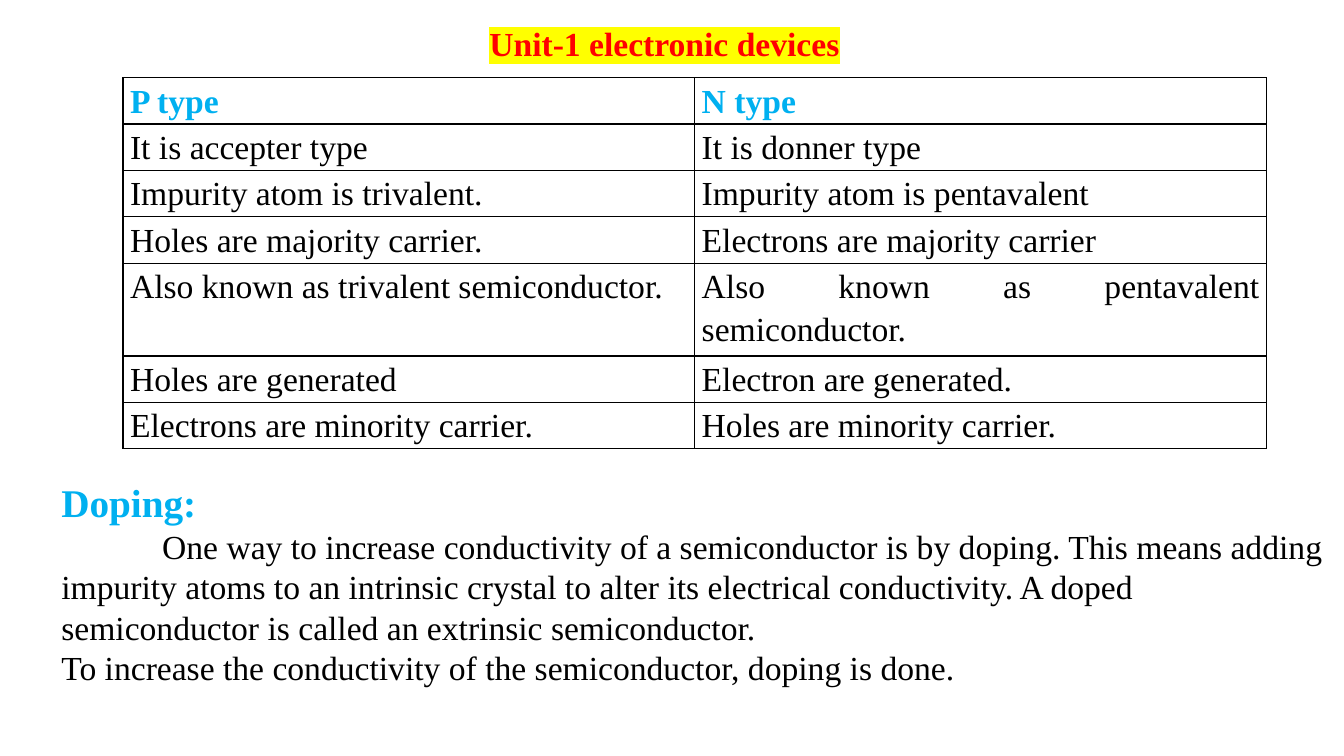
"""Build the slide that compares P type and N type semiconductors."""
from dataclasses import dataclass

import lxml.etree
import pptx
import pptx.dml.color
import pptx.enum.text
import pptx.oxml.ns
import pptx.util

Inches = pptx.util.Inches
Pt = pptx.util.Pt
ALIGN = pptx.enum.text.PP_ALIGN


@dataclass(frozen=True)
class Theme:
    """Colours, font and type sizes of the slide."""
    font: str = "Times New Roman"
    title: str = "FF0000"
    highlight: str = "FFFF00"
    heading: str = "00B0F0"
    ink: str = "000000"
    text_size: int = 24
    heading_size: int = 28
    border: float = 1


class SlideBuilder:
    """Adds styled elements to one slide."""

    def __init__(self, slide, theme):
        self.slide = slide
        self.theme = theme

    def style(self, paragraph, text, color, size=None, bold=False):
        """Write one paragraph in the theme font."""
        paragraph.text = text
        font = paragraph.font
        font.name = self.theme.font
        font.size = Pt(size or self.theme.text_size)
        font.bold = bold
        font.color.rgb = pptx.dml.color.RGBColor.from_string(color)
        return paragraph

    def text_box(self, left, top, width, height):
        """Add a wrapping text box and return its text frame."""
        shape = self.slide.shapes.add_textbox(*map(Inches, (left, top, width, height)))
        frame = shape.text_frame
        frame.word_wrap = True
        frame.auto_size = pptx.enum.text.MSO_AUTO_SIZE.SHAPE_TO_FIT_TEXT
        return frame

    def title(self, text, *box):
        """Add the centred, highlighted title."""
        paragraph = self.text_box(*box).paragraphs[0]
        self.style(paragraph, text, self.theme.title, bold=True).alignment = ALIGN.CENTER
        properties = paragraph.runs[0].font._element if hasattr(
            paragraph.runs[0].font, "_element") else paragraph.runs[0]._r.get_or_add_rPr()
        self.add_color(properties, "a:highlight", self.theme.highlight)

    def section(self, heading, body, *box):
        """Add a heading with paragraphs, the first one indented."""
        frame = self.text_box(*box)
        self.style(frame.paragraphs[0], heading, self.theme.heading,
                   self.theme.heading_size, True)
        for index, text in enumerate(body):
            paragraph = self.style(frame.add_paragraph(), text, self.theme.ink)
            if index == 0:
                paragraph._p.get_or_add_pPr().set("indent", str(Inches(1)))

    def table(self, rows, heights, left, top, width):
        """Add a ruled table with a coloured header row."""
        frame = self.slide.shapes.add_table(
            len(rows), len(rows[0]), Inches(left), Inches(top),
            Inches(width), Inches(sum(heights)))
        table = frame.table
        table.first_row = table.horz_banding = False
        for row_index, texts in enumerate(rows):
            table.rows[row_index].height = Inches(heights[row_index])
            for column_index, text in enumerate(texts):
                self.cell(table.cell(row_index, column_index), text, row_index == 0)

    def cell(self, cell, text, header):
        """Fill one table cell and draw its borders."""
        cell.margin_left = cell.margin_right = Inches(0.07)
        cell.margin_top = cell.margin_bottom = 0
        color = self.theme.heading if header else self.theme.ink
        paragraph = self.style(cell.text_frame.paragraphs[0], text, color, bold=header)
        paragraph.alignment = ALIGN.JUSTIFY
        paragraph.line_spacing = 1.15
        properties = cell._tc.get_or_add_tcPr()
        for side in "LRTB":
            line = lxml.etree.SubElement(properties, pptx.oxml.ns.qn(f"a:ln{side}"),
                                         w=str(Pt(self.theme.border)))
            self.add_color(line, "a:solidFill", self.theme.ink)
        cell.fill.background()

    def add_color(self, parent, tag, color):
        """Append a colour element to an XML parent."""
        element = lxml.etree.SubElement(parent, pptx.oxml.ns.qn(tag))
        lxml.etree.SubElement(element, pptx.oxml.ns.qn("a:srgbClr"), val=color)


COMPARISON = [
    ("P type", "N type"),
    ("It is accepter type", "It is donner type"),
    ("Impurity atom is trivalent.", "Impurity atom is pentavalent"),
    ("Holes are majority carrier.", "Electrons are majority carrier"),
    ("Also known as trivalent semiconductor.",
     "Also known as pentavalent semiconductor."),
    ("Holes are generated", "Electron are generated."),
    ("Electrons are minority carrier.", "Holes are minority carrier."),
]
ROW_HEIGHTS = [0.46] * 4 + [0.92] + [0.46] * 2
DOPING = [
    "One way to increase conductivity of a semiconductor is by doping. This means "
    "adding impurity atoms to an intrinsic crystal to alter its electrical "
    "conductivity. A doped semiconductor is called an extrinsic semiconductor.",
    "To increase the conductivity of the semiconductor, doping is done.",
]


def main():
    """Build and save the presentation."""
    presentation = pptx.Presentation()
    presentation.slide_width = Inches(13.33)
    presentation.slide_height = Inches(7.5)
    slide = presentation.slides.add_slide(presentation.slide_layouts[6])
    builder = SlideBuilder(slide, Theme())
    builder.title("Unit-1 electronic devices", 0, 0.18, 13.18, 0.93)
    builder.section("Doping:", DOPING, 0.51, 4.7, 12.75, 2.19)
    builder.table(COMPARISON, ROW_HEIGHTS, 1.22, 0.77, 11.34)
    presentation.save("out.pptx")


if __name__ == "__main__":
    main()
